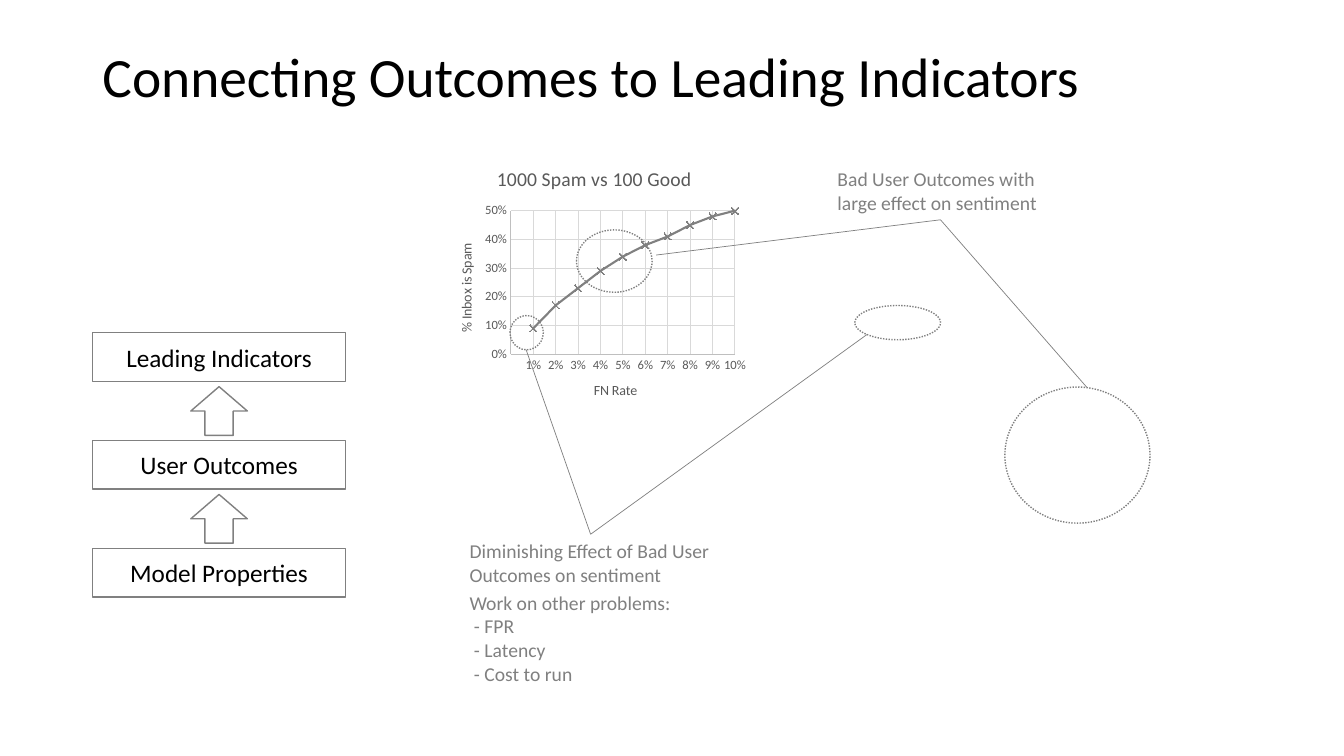
from lxml import etree
from pptx import Presentation
from pptx.chart.data import XyChartData
from pptx.dml.color import RGBColor
from pptx.enum import chart as ch, dml, shapes, text
from pptx.oxml import parse_xml
from pptx.oxml.ns import nsdecls, qn
from pptx.util import Pt

BLACK = RGBColor(0x00, 0x00, 0x00)
GRAY = RGBColor(0x80, 0x80, 0x80)
CHART_TEXT = RGBColor(0x59, 0x59, 0x59)
AXIS = RGBColor(0xBF, 0xBF, 0xBF)
GRID = RGBColor(0xD9, 0xD9, 0xD9)
FONT = "Calibri"


def set_font(font, size, color):
    font.name, font.size, font.bold = FONT, Pt(size), False
    font.color.rgb = color


def add_outline(kind, left, top, width, height):
    """Add an unfilled shape with a thin gray outline."""
    sp = s.shapes.add_shape(kind, Pt(left), Pt(top), Pt(width), Pt(height))
    sp.shadow.inherit = False
    sp.fill.background()
    sp.line.color.rgb = GRAY
    sp.line.width = Pt(1)
    return sp


prs = Presentation()
prs.slide_width, prs.slide_height = Pt(960), Pt(540)
s = prs.slides.add_slide(prs.slide_layouts[5])

# Title
title = s.shapes.title
title.left, title.top, title.width, title.height = Pt(66), Pt(28.8), Pt(729.4), Pt(55.4)
tf = title.text_frame
tf.text = "Connecting Outcomes to Leading Indicators"
tf.vertical_anchor = text.MSO_ANCHOR.MIDDLE
tf.auto_size = text.MSO_AUTO_SIZE.NONE
p = tf.paragraphs[0]
p.alignment = text.PP_ALIGN.LEFT
p.line_spacing = 0.9
set_font(p.font, 39.6, BLACK)

# Stack of boxes, each leading up to the one above
BOX_TOP, BOX_STEP = 237.6, 77
for i, label in enumerate(["Leading Indicators", "User Outcomes", "Model Properties"]):
    top = BOX_TOP + i * BOX_STEP
    box = add_outline(shapes.MSO_SHAPE.RECTANGLE, 66, top, 181, 34.8)
    tf = box.text_frame
    tf.text = label
    tf.vertical_anchor = text.MSO_ANCHOR.MIDDLE
    p = tf.paragraphs[0]
    p.alignment = text.PP_ALIGN.CENTER
    set_font(p.font, 18, BLACK)
    if i:
        add_outline(shapes.MSO_SHAPE.UP_ARROW, 136.3, top - 38.4, 40.4, 34.8)

# Spam chart
data = XyChartData(number_format="0%")
series = data.add_series("Series 1")
spam_share = [0.09, 0.17, 0.23, 0.29, 0.34, 0.38, 0.41, 0.45, 0.48, 0.5]
for percent, share in enumerate(spam_share, start=1):
    series.add_data_point(percent / 100, share)
chart = s.shapes.add_chart(ch.XL_CHART_TYPE.XY_SCATTER_LINES, Pt(311.8), Pt(108),
                           Pt(225.4), Pt(191.5), data).chart
set_font(chart.font, 10, BLACK)
chart.has_legend = False
chart.has_title = True
chart.chart_title.text_frame.text = "1000 Spam vs 100 Good"
set_font(chart.chart_title.text_frame.paragraphs[0].font, 14, CHART_TEXT)

for axis, name, maximum, unit, number_format in [
    (chart.category_axis, "FN Rate", 0.1, 0.01, "0%;;"),
    (chart.value_axis, "% Inbox is Spam", 0.5, 0.1, "0%"),
]:
    axis.minimum_scale, axis.maximum_scale, axis.major_unit = 0, maximum, unit
    axis.major_tick_mark = axis.minor_tick_mark = ch.XL_TICK_MARK.NONE
    axis.has_major_gridlines = True
    for line, color in [(axis.format.line, AXIS), (axis.major_gridlines.format.line, GRID)]:
        line.color.rgb = color
        line.width = Pt(0.75)
    axis.tick_labels.number_format = number_format
    axis.tick_labels.number_format_is_linked = False
    set_font(axis.tick_labels.font, 9, CHART_TEXT)
    axis.axis_title.text_frame.text = name
    set_font(axis.axis_title.text_frame.paragraphs[0].font, 10, CHART_TEXT)

curve = chart.plots[0].series[0]
curve.smooth = False
curve.format.line.color.rgb = GRAY
curve.format.line.width = Pt(1.5)
curve.marker.style = ch.XL_MARKER_STYLE.X
curve.marker.size = 5
curve.marker.format.fill.solid()
curve.marker.format.fill.fore_color.rgb = GRAY
curve.marker.format.line.color.rgb = GRAY

plot_area = chart.plots[0]._element.getparent()
for old in plot_area.findall(qn("c:layout")):
    plot_area.remove(old)
plot_area.insert(0, parse_xml(
    f'<c:layout {nsdecls("c")}><c:manualLayout><c:layoutTarget val="inner"/>'
    '<c:xMode val="edge"/><c:yMode val="edge"/><c:x val="0.236"/><c:y val="0.222"/>'
    '<c:w val="0.71"/><c:h val="0.535"/></c:manualLayout></c:layout>'))

# Dotted rings around the regions discussed
for ring_box in [(717.8, 276.5, 103.7, 97.2), (610.6, 218.2, 61.2, 24.5),
                 (411.8, 164.2, 54, 44.6), (364.3, 225.4, 23.8, 24.5)]:
    ring = add_outline(shapes.MSO_SHAPE.OVAL, *ring_box)
    ring.line.dash_style = dml.MSO_LINE.ROUND_DOT

# Lines from each note to its two rings
LARGE_EFFECT, DIMINISHING = (671.8, 157), (421.9, 381.6)
for start, end in [(LARGE_EFFECT, (776.2, 276.5)), (LARGE_EFFECT, (468.7, 182.2)),
                   (DIMINISHING, (375.8, 249.8)), (DIMINISHING, (619.2, 239))]:
    link = s.shapes.add_connector(shapes.MSO_CONNECTOR.STRAIGHT,
                                  *(Pt(v) for v in start + end))
    link.line.color.rgb = GRAY
    link.line.width = Pt(0.5)
    etree.SubElement(link._element.spPr, qn("a:effectLst"))

# Notes
for left, top, width, height, lines in [
    (591.1, 115.9, 159.8, 41, ["Bad User Outcomes with large effect on sentiment"]),
    (328.3, 381.6, 186.5, 41, ["Diminishing Effect of Bad User Outcomes on sentiment"]),
    (328.3, 418.5, 186.5, 75, ["Work on other problems:", " - FPR", " - Latency",
                               " - Cost to run"]),
]:
    note = s.shapes.add_textbox(Pt(left), Pt(top), Pt(width), Pt(height))
    tf = note.text_frame
    tf.word_wrap = True
    tf.auto_size = text.MSO_AUTO_SIZE.SHAPE_TO_FIT_TEXT
    tf.text = "\n".join(lines)
    for p in tf.paragraphs:
        set_font(p.font, 14, GRAY)

prs.save("out.pptx")
